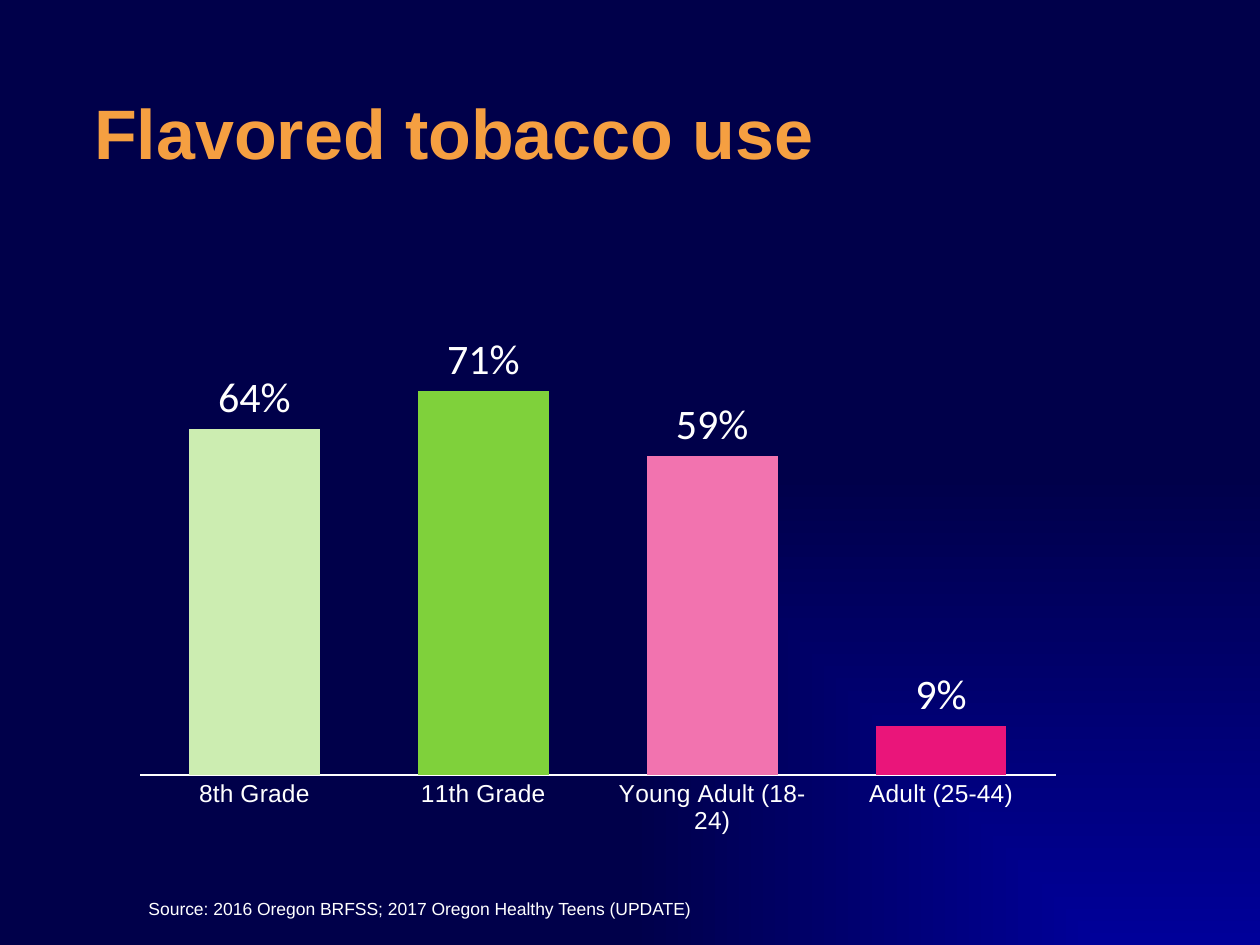
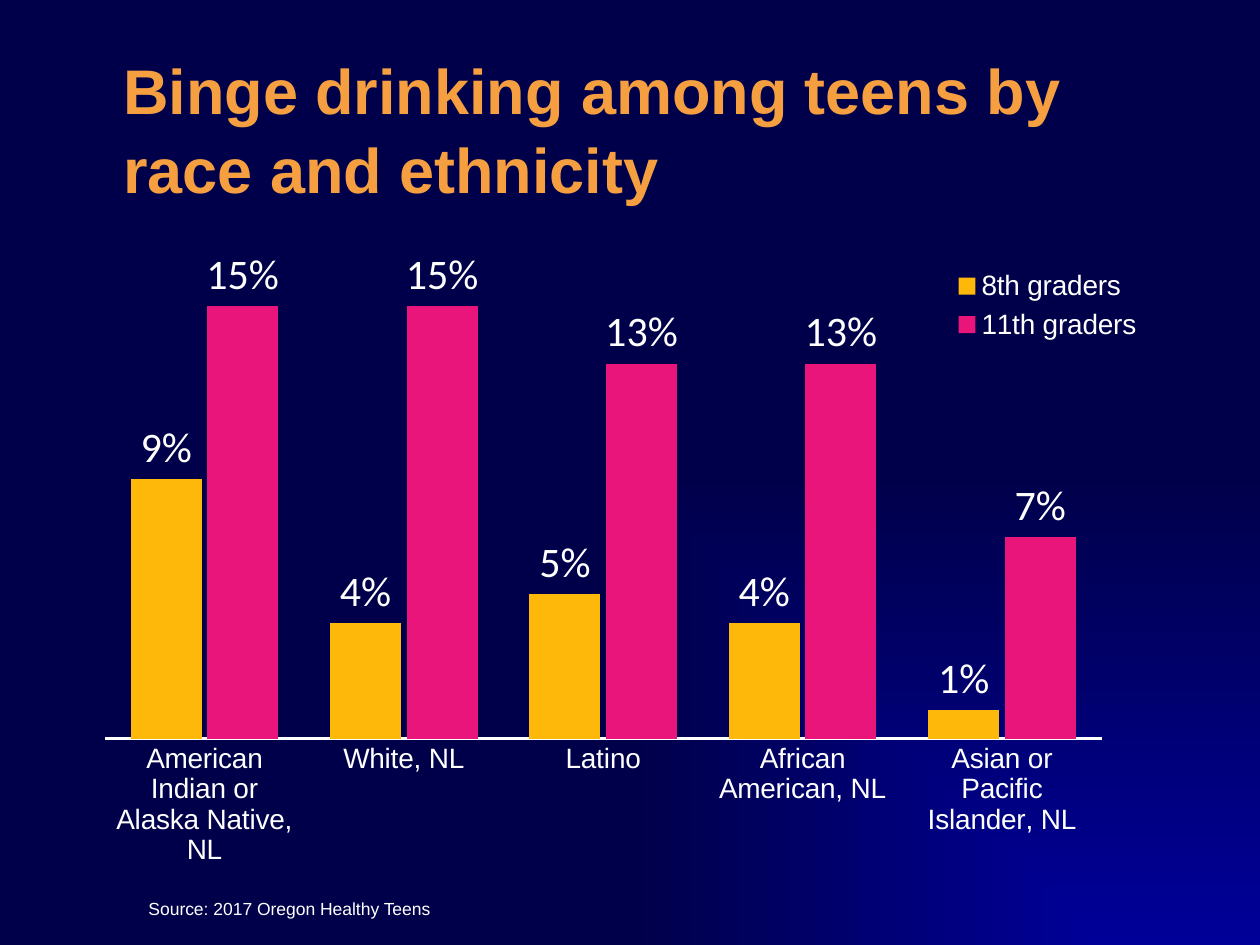
from dataclasses import dataclass

import pptx
import pptx.chart.data
import pptx.dml.color
import pptx.enum.chart
import pptx.enum.text
import pptx.oxml
import pptx.oxml.ns
import pptx.util

Inches = pptx.util.Inches
Pt = pptx.util.Pt


@dataclass(frozen=True)
class Theme:
    font: str = "Arial"
    label_font: str = "Calibri"
    glow: str = "000099"
    night: str = "00004A"
    title: str = "F59F41"
    text: str = "FFFFFF"
    pale_green: str = "CCEDB1"
    green: str = "7FD13B"
    pink: str = "F273AF"
    magenta: str = "EA157A"
    amber: str = "FEB80A"
    label_size: int = 24
    source_size: int = 10


THEME = Theme()


def rgb(color):
    return pptx.dml.color.RGBColor.from_string(color)


def format_font(font, size, color=THEME.text, name=THEME.font, bold=False):
    font.size = Pt(size)
    font.name = name
    font.bold = bold
    font.color.rgb = rgb(color)


def paint_background(master):
    """Gradient that glows from the bottom right corner, shared by all slides."""
    fill = master.background.fill
    fill.gradient()
    for stop, color in zip(fill.gradient_stops, (THEME.glow, THEME.night)):
        stop.color.rgb = rgb(color)
    linear = master.element.xpath("./p:cSld/p:bg//a:lin")[0]
    corner = pptx.oxml.parse_xml(
        f'<a:path {pptx.oxml.ns.nsdecls("a")} path="rect">'
        '<a:fillToRect l="100000" t="100000" r="0" b="0"/></a:path>')
    linear.getparent().replace(linear, corner)


def add_text(slide, text, box, anchor=pptx.enum.text.MSO_ANCHOR.TOP,
             spacing=1.0, **font_format):
    frame = slide.shapes.add_textbox(*map(Inches, box)).text_frame
    frame.word_wrap = True
    frame.vertical_anchor = anchor
    paragraph = frame.paragraphs[0]
    paragraph.line_spacing = spacing
    run = paragraph.add_run()
    run.text = text
    format_font(run.font, **font_format)


def add_title(slide, text, left, top, size):
    add_text(slide, text, (left, top, 8.5, 1.25), spacing=1.05, size=size,
             anchor=pptx.enum.text.MSO_ANCHOR.MIDDLE, color=THEME.title, bold=True)


def add_source(slide, text):
    add_text(slide, text, (1.08, 7.08, 4.72, 0.27), size=THEME.source_size)


def manual_layout(area, inner=False):
    """Layout element for x, y, width and height as shares of the chart."""
    target = '<c:layoutTarget val="inner"/>' if inner else ""
    sides = "".join(f'<c:{side} val="{share}"/>' for side, share in zip("xywh", area))
    return pptx.oxml.parse_xml(
        f'<c:layout {pptx.oxml.ns.nsdecls("c")}><c:manualLayout>{target}'
        f'<c:xMode val="edge"/><c:yMode val="edge"/>{sides}'
        '</c:manualLayout></c:layout>')


def drop_layouts(element):
    for layout in element.xpath("./c:layout"):
        element.remove(layout)


def add_columns(slide, box, categories, series, plot_area, maximum, gap, overlap,
                axis_size, axis_width, number_format):
    """Column chart; series holds (name, values, color) rows."""
    data = pptx.chart.data.CategoryChartData()
    data.categories = categories
    for name, values, _ in series:
        data.add_series(name, values)
    chart = slide.shapes.add_chart(
        pptx.enum.chart.XL_CHART_TYPE.COLUMN_CLUSTERED,
        *map(Inches, box), data).chart
    chart.has_title = False
    chart.has_legend = False
    format_font(chart.font, axis_size)

    # Axes
    groups = chart.category_axis
    groups.major_tick_mark = pptx.enum.chart.XL_TICK_MARK.NONE
    groups.format.line.color.rgb = rgb(THEME.text)
    groups.format.line.width = Pt(axis_width)
    format_font(groups.tick_labels.font, axis_size)
    scale = chart.value_axis
    scale.minimum_scale = 0
    scale.maximum_scale = maximum
    scale.has_major_gridlines = False
    scale.visible = False

    # Columns and their labels
    plot = chart.plots[0]
    plot.gap_width = gap
    plot.overlap = overlap
    plot.vary_by_categories = False
    plot.has_data_labels = True
    labels = plot.data_labels
    labels.show_value = True
    labels.number_format = number_format
    labels.number_format_is_linked = False
    labels.position = pptx.enum.chart.XL_LABEL_POSITION.OUTSIDE_END
    format_font(labels.font, THEME.label_size, name=THEME.label_font)
    for columns, (_, _, color) in zip(plot.series, series):
        columns.format.fill.solid()
        columns.format.fill.fore_color.rgb = rgb(color)

    area = chart.element.xpath(".//c:plotArea")[0]
    drop_layouts(area)
    area.insert(0, manual_layout(plot_area, inner=True))
    return chart


def color_points(columns, colors):
    for index, color in enumerate(colors):
        fill = columns.points[index].format.fill
        fill.solid()
        fill.fore_color.rgb = rgb(color)


def add_legend(chart, area, size):
    chart.has_legend = True
    legend = chart.legend
    legend.position = pptx.enum.chart.XL_LEGEND_POSITION.RIGHT
    legend.include_in_layout = False
    format_font(legend.font, size)
    element = chart.element.xpath(".//c:legend")[0]
    drop_layouts(element)
    element.xpath("./c:legendPos")[0].addnext(manual_layout(area))


def build_tobacco(slide):
    add_title(slide, "Flavored tobacco use", 0.65, 0.4, size=40)
    chart = add_columns(
        slide, (0.88, 1.81, 7.73, 5.05),
        ["8th Grade", "11th Grade", "Young Adult (18-24)", "Adult (25-44)"],
        [("Series 1", (0.64, 0.71, 0.59, 0.09), THEME.green)],
        plot_area=(0.03, 0.01, 0.94, 0.85), maximum=1, gap=75, overlap=-27,
        axis_size=14, axis_width=0.75, number_format="0%")
    color_points(chart.plots[0].series[0],
                 (THEME.pale_green, THEME.green, THEME.pink, THEME.magenta))
    add_source(slide, "Source: 2016 Oregon BRFSS; 2017 Oregon Healthy Teens (UPDATE)")


def build_drinking(slide):
    add_title(slide, "Binge drinking among teens by race and ethnicity",
              0.88, 0.38, size=36)
    chart = add_columns(
        slide, (0.66, 1.86, 8.6, 5.64),
        ["American Indian or\nAlaska Native, NL", "White, NL", "Latino",
         "African American, NL", "Asian or Pacific Islander, NL"],
        [("8th graders", (9, 4, 5, 4, 1), THEME.amber),
         ("11th graders", (15, 15, 13, 13, 7), THEME.magenta)],
        plot_area=(0.02, 0.06, 0.92, 0.65), maximum=16, gap=73, overlap=-8,
        axis_size=16, axis_width=1.5, number_format='0"%"')
    add_legend(chart, (0.8, 0.04, 0.18, 0.12), size=16)
    add_source(slide, "Source: 2017 Oregon Healthy Teens")


def main():
    deck = pptx.Presentation()
    deck.slide_width = Inches(10)
    deck.slide_height = Inches(7.5)
    paint_background(deck.slide_master)
    blank = deck.slide_layouts[6]
    for build in (build_tobacco, build_drinking):
        build(deck.slides.add_slide(blank))
    deck.save("out.pptx")


if __name__ == "__main__":
    main()
